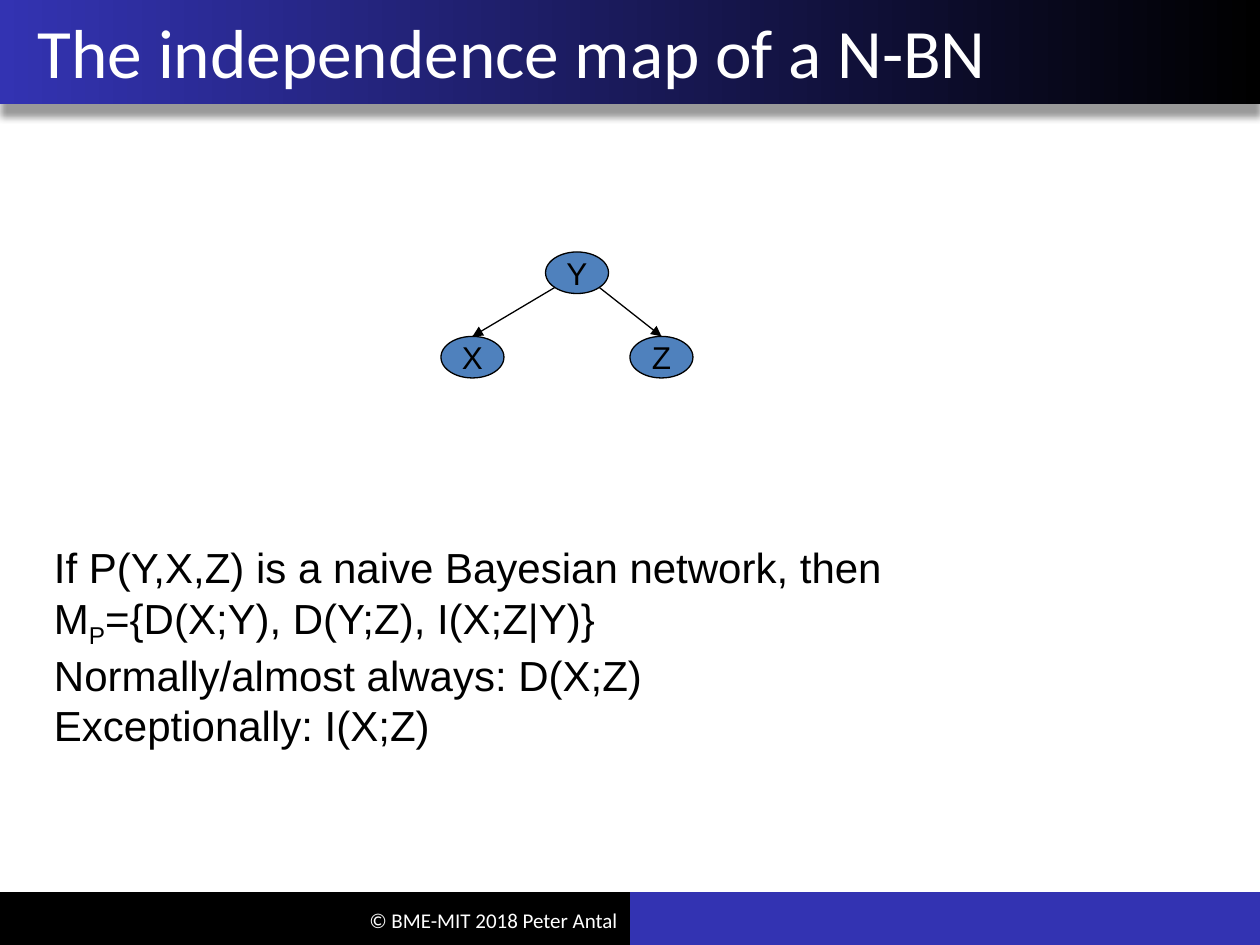
from dataclasses import dataclass
from math import sqrt

from lxml import etree
from pptx import Presentation
from pptx.dml.color import RGBColor
from pptx.enum.shapes import MSO_CONNECTOR, MSO_SHAPE
from pptx.enum.text import MSO_ANCHOR, MSO_AUTO_SIZE, PP_ALIGN
from pptx.oxml import parse_xml
from pptx.oxml.ns import nsdecls, qn
from pptx.shapes.autoshape import Shape
from pptx.slide import Slide
from pptx.text.text import Font
from pptx.util import Inches, Pt


@dataclass(frozen=True)
class Theme:
    black: RGBColor = RGBColor(0x00, 0x00, 0x00)
    white: RGBColor = RGBColor(0xFF, 0xFF, 0xFF)
    blue: RGBColor = RGBColor(0x33, 0x33, 0xB2)
    node: RGBColor = RGBColor(0x4F, 0x81, 0xBD)
    heading_font: str = "Calibri"
    body_font: str = "Arial"
    title_size: float = 39.6
    body_size: float = 24
    node_size: float = 18
    footer_size: float = 12
    line_width: float = 0.75


@dataclass(frozen=True)
class Box:
    left: float
    top: float
    width: float
    height: float

    def lengths(self) -> tuple:
        return tuple(Inches(n) for n in (self.left, self.top, self.width, self.height))


@dataclass(frozen=True)
class Node:
    label: str
    left: float
    top: float
    width: float = 0.5
    height: float = 0.33

    @property
    def center(self) -> float:
        return self.left + self.width / 2

    @property
    def box(self) -> Box:
        return Box(self.left, self.top, self.width, self.height)


THEME = Theme()
PARENT = Node("Y", 4.33, 2)
CHILDREN = (Node("X", 3.5, 2.67), Node("Z", 5, 2.67))
STATEMENT = (
    ("If P(Y,X,Z) is a naive Bayesian network, then",),
    ("M", "P", "={D(X;Y), D(Y;Z), I(X;Z|Y)}"),
    ("Normally/almost always: D(X;Z)",),
    ("Exceptionally: I(X;Z)",),
)


def style(font: Font, name: str, size: float, color: RGBColor) -> None:
    font.name = name
    font.size = Pt(size)
    font.color.rgb = color


def add_plain_shape(slide: Slide, kind: MSO_SHAPE, box: Box, color: RGBColor) -> Shape:
    shape = slide.shapes.add_shape(kind, *box.lengths())
    shape.shadow.inherit = False
    shape.fill.solid()
    shape.fill.fore_color.rgb = color
    shape.line.fill.background()
    return shape


def add_header(slide: Slide) -> None:
    header = add_plain_shape(slide, MSO_SHAPE.RECTANGLE, Box(0, 0, 10, 0.83), THEME.blue)
    header.fill.gradient()
    header.fill.gradient_angle = 180
    for stop, position, color in zip(
        header.fill.gradient_stops, (0, 1), (THEME.black, THEME.blue)
    ):
        stop.position = position
        stop.color.rgb = color
    effects = header._element.spPr.find(qn("a:effectLst"))
    effects.append(parse_xml(
        f'<a:outerShdw {nsdecls("a")} blurRad="{Pt(4)}" dist="{Pt(7)}" dir="5400000" '
        f'rotWithShape="0"><a:srgbClr val="{THEME.black}"><a:alpha val="40000"/>'
        "</a:srgbClr></a:outerShdw>"
    ))


def add_label(slide: Slide, box: Box, text: str, size: float, align: PP_ALIGN) -> Shape:
    label = slide.shapes.add_textbox(*box.lengths())
    frame = label.text_frame
    frame.word_wrap = True
    frame.vertical_anchor = MSO_ANCHOR.MIDDLE
    frame.text = text
    frame.paragraphs[0].alignment = align
    style(frame.paragraphs[0].runs[0].font, THEME.heading_font, size, THEME.white)
    return label


def add_node(slide: Slide, node: Node) -> None:
    ellipse = add_plain_shape(slide, MSO_SHAPE.OVAL, node.box, THEME.node)
    ellipse.line.color.rgb = THEME.black
    ellipse.line.width = Pt(THEME.line_width)
    frame = ellipse.text_frame
    frame.word_wrap = False
    frame.vertical_anchor = MSO_ANCHOR.MIDDLE
    frame.text = node.label
    frame.paragraphs[0].alignment = PP_ALIGN.CENTER
    style(frame.paragraphs[0].runs[0].font, THEME.body_font, THEME.node_size, THEME.black)


def add_arrow(slide: Slide, parent: Node, child: Node) -> None:
    side = 1 if child.center > parent.center else -1
    start_x = parent.center + side * parent.width / 2 / sqrt(2)
    start_y = parent.top + parent.height / 2 * (1 + 1 / sqrt(2))
    arrow = slide.shapes.add_connector(
        MSO_CONNECTOR.STRAIGHT,
        Inches(start_x), Inches(start_y), Inches(child.center), Inches(child.top),
    )
    arrow.line.color.rgb = THEME.black
    arrow.line.width = Pt(THEME.line_width)
    etree.SubElement(arrow.line._get_or_add_ln(), qn("a:tailEnd"), type="triangle")
    etree.SubElement(arrow._element.spPr, qn("a:effectLst"))


def add_statement(slide: Slide) -> None:
    statement = slide.shapes.add_textbox(*Box(0.33, 4.25, 8.42, 1.72).lengths())
    frame = statement.text_frame
    frame.word_wrap = True
    frame.auto_size = MSO_AUTO_SIZE.SHAPE_TO_FIT_TEXT
    for index, parts in enumerate(STATEMENT):
        paragraph = frame.add_paragraph() if index else frame.paragraphs[0]
        for position, part in enumerate(parts):
            run = paragraph.add_run()
            run.text = part
            style(run.font, THEME.body_font, THEME.body_size, THEME.black)
            if position == 1:
                run.font._element.set("baseline", "-25000")


def main() -> None:
    """Build the slide on the independence map of a naive Bayesian network."""
    deck = Presentation()
    deck.slide_width, deck.slide_height = Inches(10), Inches(7.5)
    slide = deck.slides.add_slide(deck.slide_layouts[6])
    for left, color in ((5, THEME.blue), (0, THEME.black)):
        add_plain_shape(slide, MSO_SHAPE.RECTANGLE, Box(left, 7.08, 5, 0.42), color)
    add_header(slide)
    add_label(slide, Box(1.17, 7.1, 3.83, 0.4), "© BME-MIT 2018 Peter Antal",
              THEME.footer_size, PP_ALIGN.RIGHT)
    title = add_label(slide, Box(0, 0, 9.85, 0.81), "The independence map of a N-BN",
                      THEME.title_size, PP_ALIGN.LEFT)
    title.text_frame.margin_left = Inches(0.3)
    for node in (PARENT, *CHILDREN):
        add_node(slide, node)
    for child in CHILDREN:
        add_arrow(slide, PARENT, child)
    add_statement(slide)
    deck.save("out.pptx")


if __name__ == "__main__":
    main()
